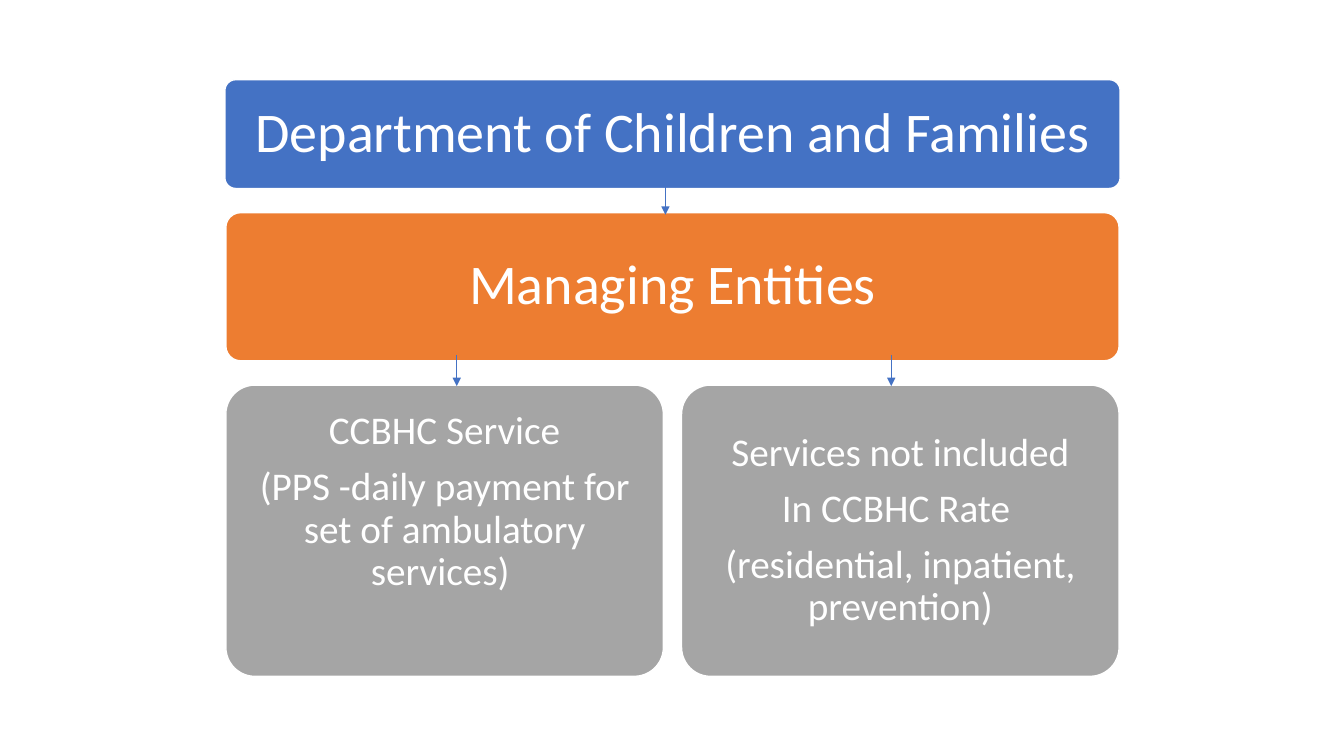
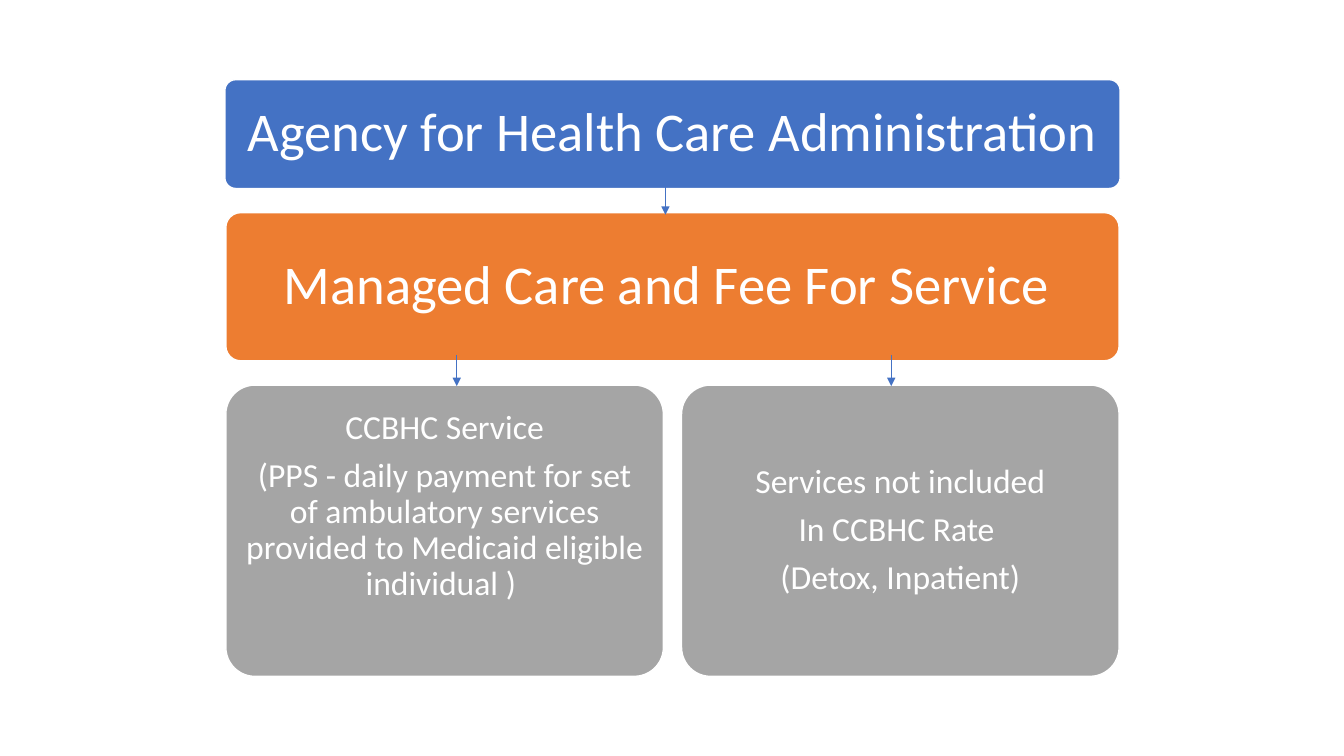
from lxml.etree import SubElement
from pptx import Presentation
from pptx.dml.color import RGBColor
from pptx.enum.shapes import MSO_CONNECTOR, MSO_SHAPE
from pptx.enum.text import MSO_ANCHOR, PP_ALIGN
from pptx.oxml.ns import qn
from pptx.util import Inches, Pt

BLUE = RGBColor(0x44, 0x72, 0xC4)
ORANGE = RGBColor(0xED, 0x7D, 0x31)
GRAY = RGBColor(0xA5, 0xA5, 0xA5)
WHITE = RGBColor(0xFF, 0xFF, 0xFF)
FONT = "Calibri"

AGENCY_BOX = (2.23, 0.79, 8.88, 1.08)
PAYER_BOX = (2.24, 2.11, 8.86, 1.47)
SERVICE_WIDTH, SERVICE_TOP, SERVICE_HEIGHT = 4.34, 3.82, 2.89
SERVICE_LEFTS = (PAYER_BOX[0], PAYER_BOX[0] + PAYER_BOX[2] - SERVICE_WIDTH)
ARROWS = ((6.6, 1.82), (4.53, 3.52), (8.84, 3.52))
ARROW_LENGTH = 0.31

CHARTS = (
    {
        "agency": "Department of Children and Families",
        "payer": "Managing Entities",
        "included": ("CCBHC Service",
                     "(PPS -daily payment for set of ambulatory services) "),
        "excluded": ("Services not included", "In CCBHC Rate ",
                     "(residential, inpatient, prevention)"),
        "heading_size": 40,
        "service_size": 28,
    },
    {
        "agency": "Agency for Health Care Administration",
        "payer": "Managed Care and Fee For Service ",
        "included": ("CCBHC Service",
                     "(PPS - daily payment for set of ambulatory services "
                     "provided to Medicaid eligible individual ) "),
        "excluded": ("Services not included", "In CCBHC Rate ",
                     "(Detox, Inpatient)"),
        "heading_size": 39,
        "service_size": 24,
    },
)


def write_text(tf, lines, *, size, color=WHITE, raised=False):
    """Write centred paragraphs, optionally raised by about one line."""
    tf.word_wrap = True
    tf.vertical_anchor = MSO_ANCHOR.MIDDLE
    inset = Inches(size / 240)
    tf.margin_left = tf.margin_right = tf.margin_top = inset
    tf.margin_bottom = inset + (Inches(size * 0.02) if raised else 0)
    for i, line in enumerate(lines):
        p = tf.paragraphs[0] if i == 0 else tf.add_paragraph()
        p.alignment = PP_ALIGN.CENTER
        p.line_spacing = 0.9
        p.space_after = Pt(size * 0.35)
        r = p.add_run()
        r.text = line
        r.font.name = FONT
        r.font.size = Pt(size)
        r.font.color.rgb = color


def add_box(s, box, fill, lines, **text_format):
    """Add a rounded box with a white outline and centred text."""
    sp = s.shapes.add_shape(MSO_SHAPE.ROUNDED_RECTANGLE, *map(Inches, box))
    sp.adjustments[0] = 0.1
    sp.shadow.inherit = False
    sp.fill.solid()
    sp.fill.fore_color.rgb = fill
    sp.line.color.rgb = WHITE
    sp.line.width = Pt(1)
    write_text(sp.text_frame, lines, **text_format)


def add_down_arrow(s, x, y):
    """Add a thin arrow pointing down from the given point."""
    c = s.shapes.add_connector(MSO_CONNECTOR.STRAIGHT, Inches(x), Inches(y),
                               Inches(x), Inches(y + ARROW_LENGTH))
    c.line.color.rgb = BLUE
    c.line.width = Pt(0.5)
    SubElement(c.line._get_or_add_ln(), qn("a:tailEnd"), type="triangle")
    SubElement(c._element.spPr, qn("a:effectLst"))


def add_chart_slide(prs, chart):
    """Add one slide showing how funding flows from agency to services."""
    s = prs.slides.add_slide(prs.slide_layouts[6])
    heading, service = chart["heading_size"], chart["service_size"]
    add_box(s, AGENCY_BOX, BLUE, [chart["agency"]], size=heading)
    add_box(s, PAYER_BOX, ORANGE, [chart["payer"]], size=heading)
    for left, key in zip(SERVICE_LEFTS, ("included", "excluded")):
        box = (left, SERVICE_TOP, SERVICE_WIDTH, SERVICE_HEIGHT)
        add_box(s, box, GRAY, chart[key], size=service,
                raised=key == "included")
    for x, y in ARROWS:
        add_down_arrow(s, x, y)


def main():
    """Build and save the presentation."""
    prs = Presentation()
    prs.slide_width, prs.slide_height = Inches(13.33), Inches(7.5)
    for chart in CHARTS:
        add_chart_slide(prs, chart)
    prs.save("out.pptx")


if __name__ == "__main__":
    main()
